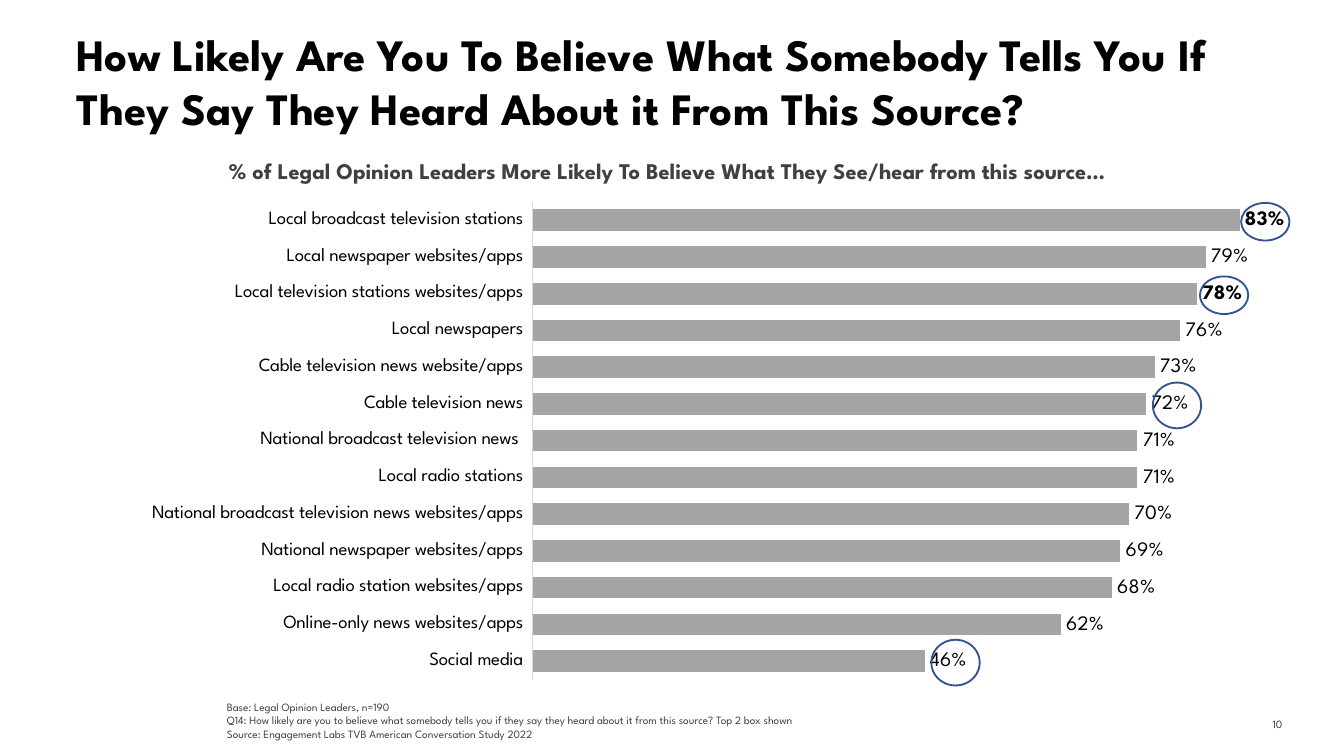
from dataclasses import dataclass

from lxml import etree
from pptx import Presentation
from pptx import util as u
from pptx.chart.data import CategoryChartData
from pptx.dml.color import RGBColor
from pptx.enum import chart as ch, shapes, text
from pptx.oxml.ns import qn

SLIDE_W = 10
SLIDE_H = SLIDE_W * 9 / 16


@dataclass(frozen=True)
class Theme:
    face: str = "League Spartan"
    ink: str = "000000"
    muted: str = "404040"
    number: str = "3C3C3A"
    bar: str = "A5A5A5"
    axis: str = "D9D9D9"
    ring: str = "325491"
    title: float = 24
    subtitle: float = 12
    value: float = 11
    category: float = 10
    note: float = 6


THEME = Theme()

HEADLINE = ("How Likely Are You To Believe What Somebody Tells You If "
            "They Say They Heard About it From This Source?")
SUBTITLE = ("% of Legal Opinion Leaders More Likely To Believe "
            "What They See/hear from this source…")
NOTES = (
    "Base: Legal Opinion Leaders, n=190",
    "Q14: How likely are you to believe what somebody tells you if they say "
    "they heard about it from this source? Top 2 box shown",
    "Source: Engagement Labs TVB American Conversation Study 2022",
)
BELIEF = (
    ("Local broadcast television stations ", 0.83),
    ("Local newspaper websites/apps ", 0.79),
    ("Local television stations websites/apps ", 0.78),
    ("Local newspapers ", 0.76),
    ("Cable television news website/apps ", 0.73),
    ("Cable television news ", 0.72),
    ("National broadcast television news  ", 0.71),
    ("Local radio stations ", 0.71),
    ("National broadcast television news websites/apps ", 0.70),
    ("National newspaper websites/apps ", 0.69),
    ("Local radio station websites/apps ", 0.68),
    ("Online-only news websites/apps ", 0.62),
    ("Social media ", 0.46),
)
AXIS_MAX = 0.9
PLOT = {"x": 0.338, "y": 0.04, "w": 0.646, "h": 0.928}  # shares of the chart
BOLD_ROWS = (0, 2)
# row: (ring height, gap between bar end and ring)
RINGS = {0: (0.28, 0.01), 2: (0.28, 0.02), 5: (0.34, 0.05), 12: (0.34, 0.05)}
RING_W = 0.36


def inches(box):
    return [u.Inches(length) for length in box]


def style_font(font, size, color, bold=False):
    for key, value in {"name": THEME.face, "size": u.Pt(size), "bold": bold}.items():
        setattr(font, key, value)
    font.color.rgb = RGBColor.from_string(color)


def add_text(slide, box, lines, size, color, bold=False, **frame_format):
    """Place one paragraph per line; align goes to the paragraphs."""
    align = frame_format.pop("align", text.PP_ALIGN.LEFT)
    frame = slide.shapes.add_textbox(*inches(box)).text_frame
    for key, value in {"word_wrap": True, **frame_format}.items():
        setattr(frame, key, value)
    for index, line in enumerate(lines):
        paragraph = frame.paragraphs[0] if index == 0 else frame.add_paragraph()
        paragraph.alignment = align
        run = paragraph.add_run()
        run.text = line
        style_font(run.font, size, color, bold)


def add_header(slide, box):
    left, top, width, height = box
    add_text(slide, (left, top, width, 0.9), [HEADLINE], THEME.title, THEME.ink, True)
    add_text(slide, (left + 0.8, top + 0.97, 7.39, height - 0.97), [SUBTITLE],
             THEME.subtitle, THEME.muted, True,
             word_wrap=False, align=text.PP_ALIGN.CENTER)


def fix_plot_area(chart):
    """Pin the inner plot area to the PLOT shares."""
    plot_area = chart._chartSpace.chart.plotArea
    for old in plot_area.findall(qn("c:layout")):
        plot_area.remove(old)
    layout = etree.Element(qn("c:layout"))
    manual = etree.SubElement(layout, qn("c:manualLayout"))
    settings = {"layoutTarget": "inner", "xMode": "edge", "yMode": "edge", **PLOT}
    for tag, value in settings.items():
        etree.SubElement(manual, qn(f"c:{tag}")).set("val", str(value))
    plot_area.insert(0, layout)


def add_belief_chart(slide, box):
    data = CategoryChartData(number_format="0%")
    data.categories = [source for source, _ in BELIEF]
    data.add_series("Series 1", [share for _, share in BELIEF])
    chart = slide.shapes.add_chart(
        ch.XL_CHART_TYPE.BAR_CLUSTERED, *inches(box), data).chart
    chart.has_legend = chart.has_title = False
    style_font(chart.font, THEME.category, THEME.ink)
    fix_plot_area(chart)

    sources, shares = chart.category_axis, chart.value_axis
    sources.reverse_order = True
    sources.major_tick_mark = ch.XL_TICK_MARK.NONE
    sources.format.line.color.rgb = RGBColor.from_string(THEME.axis)
    sources.format.line.width = u.Pt(0.75)
    style_font(sources.tick_labels.font, THEME.category, THEME.ink)
    for key, value in {"minimum_scale": 0, "maximum_scale": AXIS_MAX,
                       "has_major_gridlines": False, "visible": False}.items():
        setattr(shares, key, value)

    plot = chart.plots[0]
    plot.gap_width, plot.vary_by_categories = 70, False
    bars = plot.series[0]
    bars.format.fill.solid()
    bars.format.fill.fore_color.rgb = RGBColor.from_string(THEME.bar)
    labels = bars.data_labels
    for key, value in {"show_value": True, "number_format": "#,##0%",
                       "number_format_is_linked": False,
                       "position": ch.XL_LABEL_POSITION.OUTSIDE_END}.items():
        setattr(labels, key, value)
    style_font(labels.font, THEME.value, THEME.ink)
    for row in BOLD_ROWS:
        label = bars.points[row].data_label
        style_font(label.font, THEME.value, THEME.ink, True)
        label.position = ch.XL_LABEL_POSITION.OUTSIDE_END


def add_rings(slide, box):
    """Circle the chosen values just past the ends of their bars."""
    left, top, width, height = box
    row_h = height * PLOT["h"] / len(BELIEF)
    for row, (ring_h, gap) in RINGS.items():
        bar_end = left + width * (PLOT["x"] + PLOT["w"] * BELIEF[row][1] / AXIS_MAX)
        middle = top + height * PLOT["y"] + row_h * (row + 0.5) + 0.01
        ring = slide.shapes.add_shape(
            shapes.MSO_SHAPE.OVAL,
            *inches((bar_end + gap, middle - ring_h / 2, RING_W, ring_h)))
        ring.shadow.inherit = False
        ring.fill.background()
        ring.line.color.rgb = RGBColor.from_string(THEME.ring)
        ring.line.width = u.Pt(1)


def add_footer(slide, box):
    left, top, width, height = box
    add_text(slide, box, NOTES, THEME.note, THEME.muted,
             vertical_anchor=text.MSO_ANCHOR.BOTTOM)
    add_text(slide, (left + width - 0.64, top + 0.08, 0.59, 0.3), ["10"],
             THEME.note, THEME.number, align=text.PP_ALIGN.RIGHT,
             vertical_anchor=text.MSO_ANCHOR.MIDDLE)


def main():
    deck = Presentation()
    deck.slide_width, deck.slide_height = inches((SLIDE_W, SLIDE_H))
    slide = deck.slides.add_slide(deck.slide_layouts[6])
    chart_box = (0.98, 1.35, 8.83, 3.83)
    add_belief_chart(slide, chart_box)
    add_header(slide, (0.47, 0.15, 9.21, 1.47))
    add_footer(slide, (1.59, 5.16, 8.1, 0.4))
    add_rings(slide, chart_box)
    deck.save("out.pptx")


if __name__ == "__main__":
    main()
